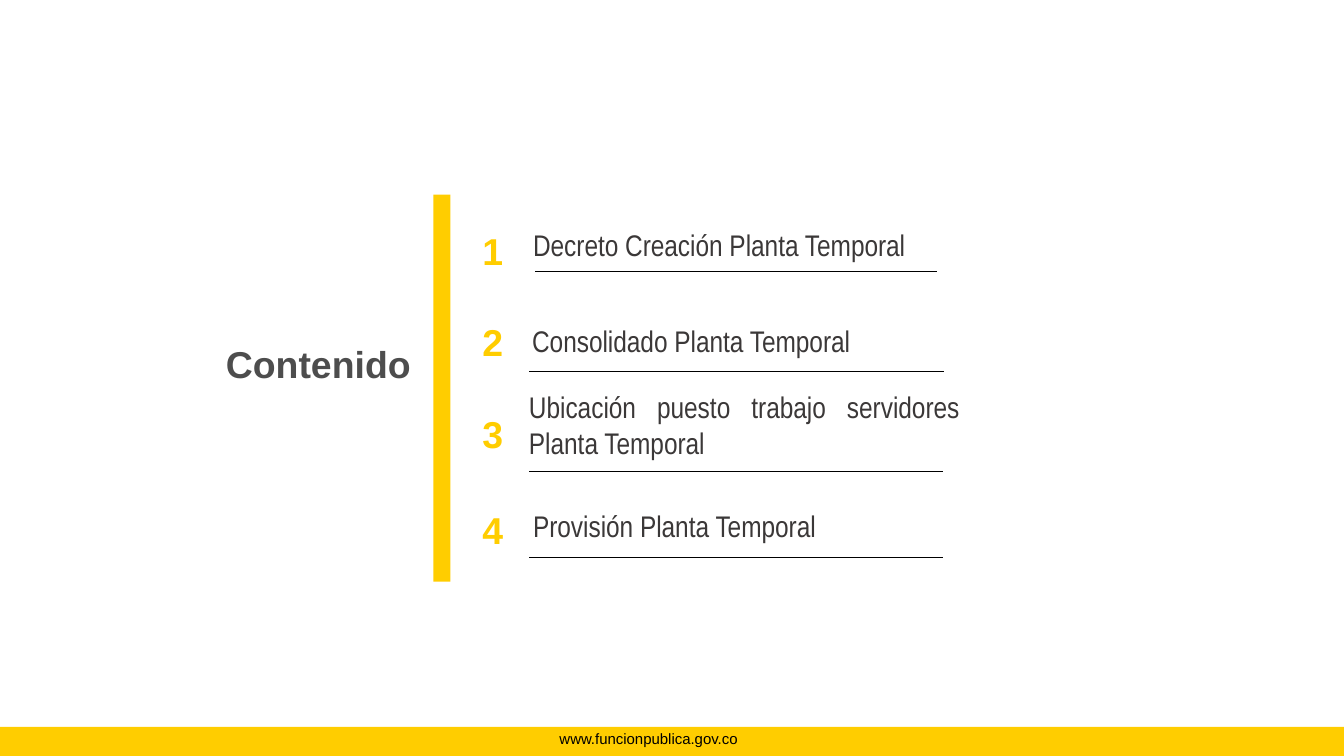
from lxml import etree
from pptx import Presentation
from pptx.dml.color import RGBColor
from pptx.enum import shapes, text
from pptx.oxml import ns
from pptx.util import Pt

HUES = {"gold": "FFCD00", "ink": "3B3838", "grey": "4D4D4D", "black": "000000"}
ALIGN = text.PP_ALIGN

# Text formats
HEAD = {"name": "Arial", "size": Pt(26.7), "bold": True}
ITEM = {"name": "Arial Narrow", "size": Pt(21.3), "bold": False}
FOOT = {"name": "Arial", "size": Pt(10.7), "bold": False}

# Number top, label, label box, rule (left, right, height)
ROWS = [
    (159.1, "Decreto Creación Planta Temporal",
     (373.7, 158.4, 295.9, 33.1), (382.3, 669.6, 193.7)),
    (224.6, "Consolidado Planta Temporal",
     (373, 226.8, 296.6, 33.1), (378, 674.6, 265)),
    (290.2, "Ubicación puesto trabajo servidores Planta Temporal",
     (370.8, 274.3, 321.8, 59), (378, 673.9, 337)),
    (358.6, "Provisión Planta Temporal",
     (373.7, 359.3, 287.3, 33.1), (378, 673.9, 398.2)),
]


def color(hue):
    return RGBColor.from_string(HUES[hue])


def write(box, words, look, hue, align):
    frame = box.text_frame
    frame.word_wrap = True
    frame.auto_size = text.MSO_AUTO_SIZE.SHAPE_TO_FIT_TEXT
    frame.vertical_anchor = text.MSO_ANCHOR.TOP
    frame.text = words
    line = frame.paragraphs[0]
    line.alignment = align
    font = line.runs[0].font
    for key, value in look.items():
        setattr(font, key, value)
    font.color.rgb = color(hue)


def label(slide, place, words, look, hue, align):
    box = slide.shapes.add_textbox(*map(Pt, place))
    write(box, words, look, hue, align)


def title(slide, place, words):
    head = slide.shapes.title
    for key, value in zip(("left", "top", "width", "height"), place):
        setattr(head, key, Pt(value))
    write(head, words, HEAD, "grey", ALIGN.LEFT)
    head.text_frame.paragraphs[0].line_spacing = 1.0


def bar(slide, place):
    block = slide.shapes.add_shape(
        shapes.MSO_SHAPE.RECTANGLE, *map(Pt, place))
    block.shadow.inherit = False
    block.fill.solid()
    block.fill.fore_color.rgb = color("gold")
    block.line.fill.background()


def rule(slide, left, right, y):
    line = slide.shapes.add_connector(
        shapes.MSO_CONNECTOR.STRAIGHT, Pt(left), Pt(y), Pt(right), Pt(y))
    line.line.color.rgb = color("black")
    line.line.width = Pt(0.5)
    etree.SubElement(line._element.spPr, ns.qn("a:effectLst"))


def main():
    deck = Presentation()
    deck.slide_width, deck.slide_height = Pt(960), Pt(540)
    slide = deck.slides.add_slide(deck.slide_layouts[5])

    # Footer
    bar(slide, (0, 519.1, 960, 20.9))
    label(slide, (348.5, 517.7, 229.7, 20.2), "www.funcionpublica.gov.co",
          FOOT, "black", ALIGN.CENTER)

    # Title and divider
    title(slide, (154.1, 239.8, 169.2, 39.6), "Contenido")
    bar(slide, (309.6, 139, 12.2, 276.5))

    # Numbered contents
    for count, (top, words, place, ends) in enumerate(ROWS, 1):
        label(slide, (334.1, top, 36, 39.6), str(count),
              HEAD, "gold", ALIGN.CENTER)
        label(slide, place, words, ITEM, "ink", ALIGN.JUSTIFY)
        rule(slide, *ends)

    deck.save("out.pptx")


if __name__ == "__main__":
    main()
